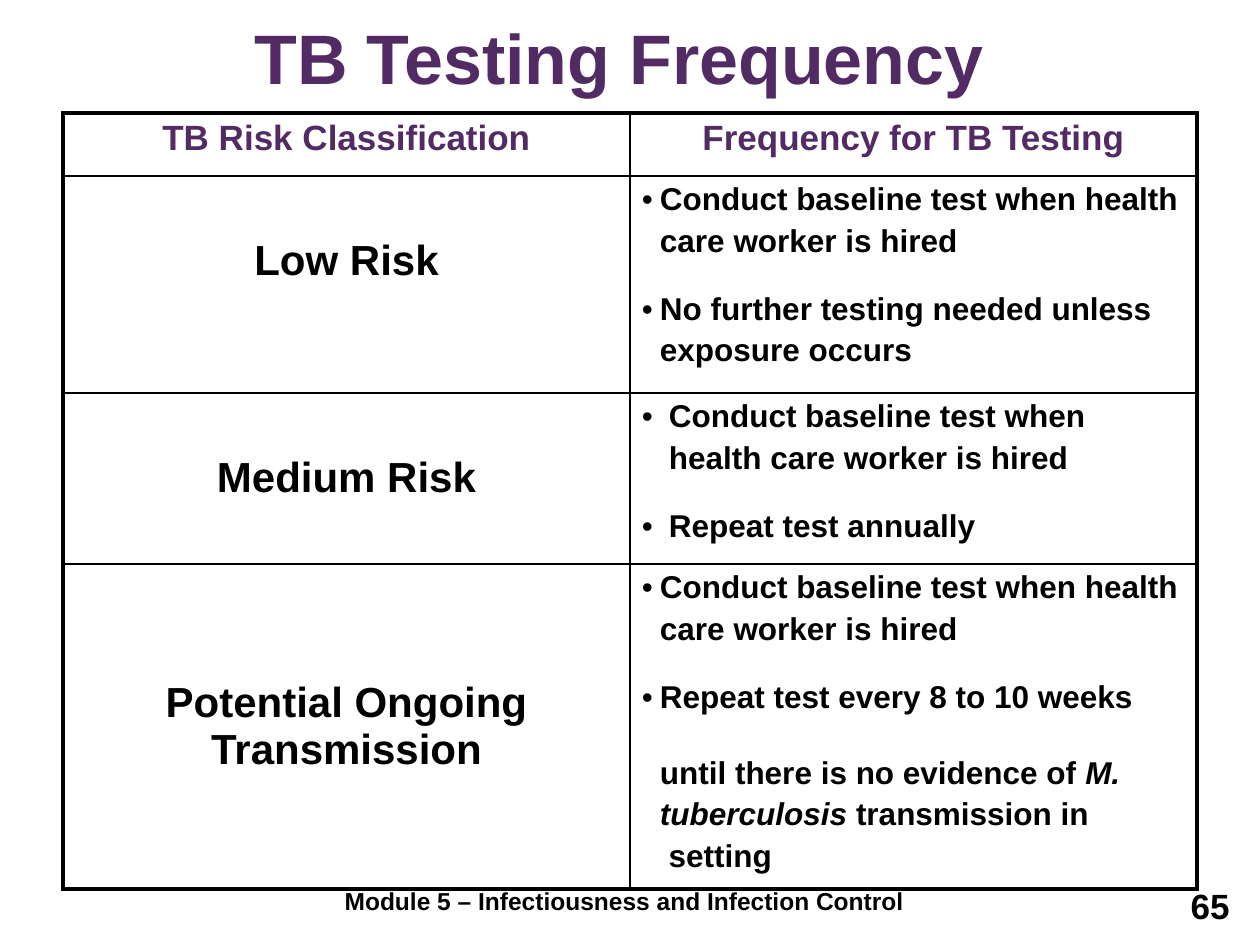
"""Build the TB testing frequency slide: title, bordered table and footer."""
from dataclasses import dataclass

from pptx import Presentation
from pptx import util as u
from pptx.dml.color import RGBColor
from pptx.enum import text
from pptx.oxml import parse_xml
from pptx.oxml.ns import nsdecls

PX_PER_INCH = 126
PURPLE = RGBColor(0x53, 0x2B, 0x64)
BLACK = RGBColor(0, 0, 0)
CENTER = text.PP_ALIGN.CENTER
LEFT = text.PP_ALIGN.LEFT
RIGHT = text.PP_ALIGN.RIGHT
FONT = "Arial"
MARGIN_X, MARGIN_Y = 12, 6
OUTER_PT, INNER_PT = 2.25, 1


@dataclass(frozen=True)
class Line:
    """One line of a testing rule; italic text comes before or after the plain text."""
    plain: str
    bullet: bool = False
    before: float = 3.6
    italic_first: str = ""
    italic_last: str = ""


@dataclass(frozen=True)
class Risk:
    """One risk class with its testing rules."""
    name: str
    height: int
    name_top: int
    hang: int
    lines: tuple[Line, ...]


BASELINE = (
    Line("Conduct baseline test when health", bullet=True),
    Line("care worker is hired"),
)
RISKS = (
    Risk("Low Risk", 217, 62, 18, BASELINE + (
        Line("No further testing needed unless", bullet=True, before=18.7),
        Line("exposure occurs"),
    )),
    Risk("Medium Risk", 171, 62, 27, (
        Line("Conduct baseline test when", bullet=True),
        Line("health care worker is hired"),
        Line("Repeat test annually", bullet=True, before=18.7),
    )),
    Risk("Potential Ongoing Transmission", 307, 116, 18, BASELINE + (
        Line("Repeat test every 8 to 10 weeks", bullet=True, before=18.7),
        Line("until there is no evidence of ", before=23.3, italic_last="M."),
        Line(" transmission in", italic_first="tuberculosis"),
        Line(" setting"),
    )),
)
HEADINGS = ("TB Risk Classification", "Frequency for TB Testing")
HEADING_HEIGHT = 63


def px(length: int) -> u.Emu:
    """Turn pixels into EMU."""
    return u.Emu(round(length * u.Inches(1) / PX_PER_INCH))


def write(paragraph, words: str, *, size: int, color: RGBColor = BLACK,
          align: text.PP_ALIGN = LEFT, bold: bool = True, italic: bool = False) -> None:
    """Add one formatted run to a paragraph."""
    paragraph.alignment = align
    run = paragraph.add_run()
    run.text = words
    font = run.font
    font.name, font.size = FONT, u.Pt(size)
    font.bold, font.italic = bold, italic
    font.color.rgb = color


def set_indent(paragraph, hang: int, bullet: bool) -> None:
    """Hang a paragraph, with or without a bullet."""
    properties = paragraph._p.get_or_add_pPr()
    properties.set("marL", str(px(hang)))
    properties.set("indent", str(-px(hang) if bullet else 0))
    marks = (f'buFont {{}} typeface="{FONT}"', 'buChar {} char="•"') if bullet else ("buNone {}",)
    for mark in marks:
        properties.append(parse_xml(f'<a:{mark.format(nsdecls("a"))}/>'))


def write_rules(cell, risk: Risk) -> None:
    """Write the testing rules of one risk class."""
    frame = cell.text_frame
    for index, line in enumerate(risk.lines):
        paragraph = frame.add_paragraph() if index else frame.paragraphs[0]
        paragraph.space_before = u.Pt(line.before if index else 0)
        set_indent(paragraph, risk.hang, line.bullet)
        pieces = ((line.italic_first, True), (line.plain, False), (line.italic_last, True))
        for words, italic in pieces:
            if words:
                write(paragraph, words, size=18, italic=italic)


def style_cell(cell, widths: dict[str, float], top: int = MARGIN_Y) -> None:
    """Clear a cell's fill and set its margins and borders."""
    cell.margin_left = cell.margin_right = px(MARGIN_X)
    cell.margin_top, cell.margin_bottom = px(top), px(0)
    properties = cell._tc.get_or_add_tcPr()
    for side, width in widths.items():
        properties.append(parse_xml(
            f'<a:ln{side} {nsdecls("a")} w="{u.Pt(width)}"><a:solidFill>'
            f'<a:srgbClr val="{BLACK}"/></a:solidFill></a:ln{side}>'))
    cell.fill.background()


def add_risk_table(slide) -> None:
    """Add the table of risk classes and testing frequency."""
    heights = (HEADING_HEIGHT, *(risk.height for risk in RISKS))
    frame = slide.shapes.add_table(len(heights), 2, px(63), px(113), px(1134), px(sum(heights)))
    table = frame.table
    table.first_row = table.horz_banding = False
    for row, height in zip(table.rows, heights):
        row.height = px(height)
    for column, heading in enumerate(HEADINGS):
        write(table.cell(0, column).text_frame.paragraphs[0], heading,
              size=20, color=PURPLE, align=CENTER)
    for row, risk in enumerate(RISKS, start=1):
        write(table.cell(row, 0).text_frame.paragraphs[0], risk.name, size=24, align=CENTER)
        write_rules(table.cell(row, 1), risk)
    last = len(heights) - 1
    for row in range(len(heights)):
        for column in range(2):
            outer = {"L": column == 0, "R": column == 1, "T": row == 0, "B": row == last}
            widths = {side: OUTER_PT if edge else INNER_PT for side, edge in outer.items()}
            top = RISKS[row - 1].name_top if row and column == 0 else MARGIN_Y
            style_cell(table.cell(row, column), widths, top)


def add_label(slide, words: str, box: tuple[int, int, int, int],
              size: int, align: text.PP_ALIGN) -> None:
    """Add a footer label."""
    frame = slide.shapes.add_textbox(*map(px, box)).text_frame
    frame.word_wrap = True
    write(frame.paragraphs[0], words, size=size, align=align)


def add_title(slide, words: str) -> None:
    """Fill and place the title placeholder."""
    title = slide.shapes.title
    title.left, title.top, title.width, title.height = map(px, (52, 0, 1134, 105))
    frame = title.text_frame
    frame.auto_size = text.MSO_AUTO_SIZE.NONE
    frame.vertical_anchor = text.MSO_ANCHOR.BOTTOM
    write(frame.paragraphs[0], words, size=40, color=PURPLE, align=CENTER)


def main() -> None:
    """Build and save the slide."""
    deck = Presentation()
    deck.slide_width, deck.slide_height = px(1260), px(945)
    slide = deck.slides.add_slide(deck.slide_layouts[5])
    add_title(slide, "TB Testing Frequency")
    add_label(slide, "Module 5 – Infectiousness and Infection Control",
              (220, 880, 809, 65), 14, CENTER)
    add_label(slide, "65", (949, 878, 293, 65), 20, RIGHT)
    add_risk_table(slide)
    deck.save("out.pptx")


if __name__ == "__main__":
    main()
